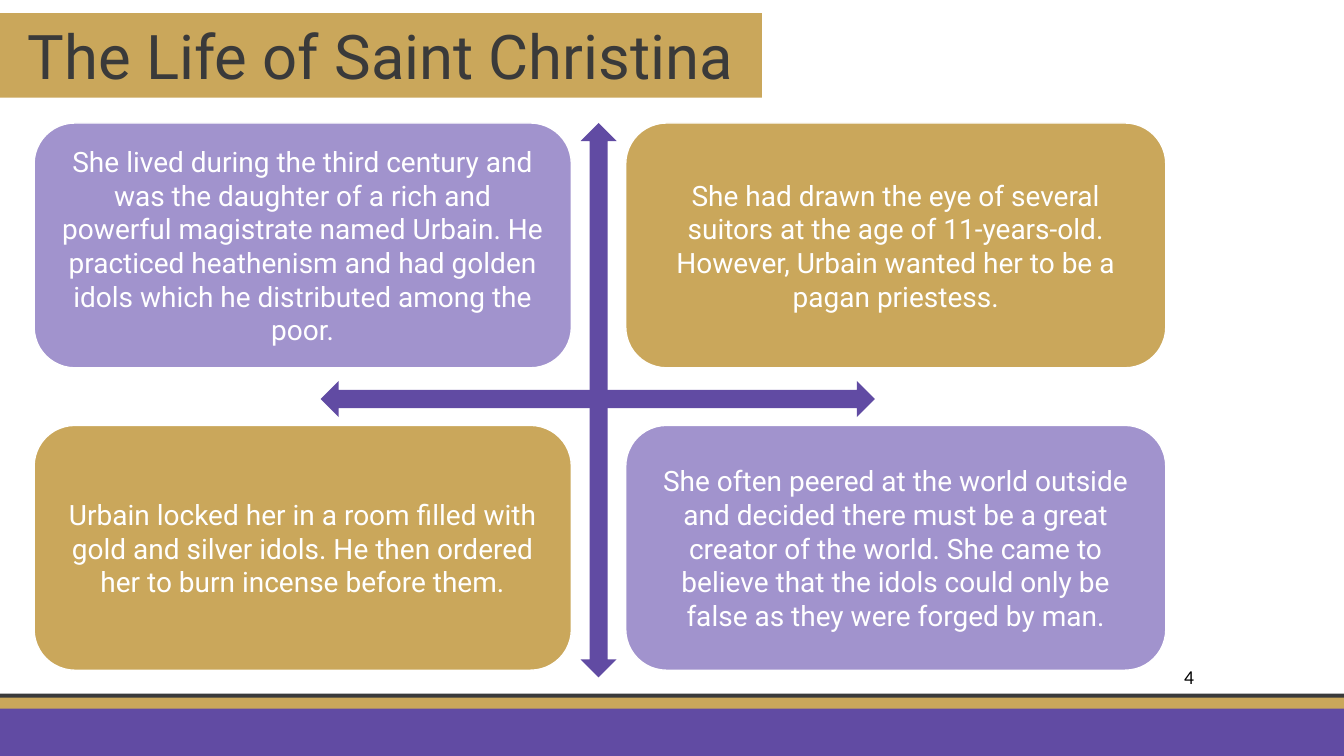
from dataclasses import dataclass

from pptx import Presentation
from pptx.dml.color import RGBColor
from pptx.enum.shapes import MSO_SHAPE as Preset
from pptx.enum.text import MSO_ANCHOR as Anchor, MSO_AUTO_SIZE as AutoSize, PP_ALIGN as Align
from pptx.util import Cm, Pt


@dataclass(frozen=True)
class Theme:
    gold: str = "CAA75B"
    purple: str = "614BA3"
    lilac: str = "A193CD"
    dark: str = "3A3A3A"
    white: str = "FFFFFF"
    black: str = "000000"
    font: str = "Roboto"
    number_font: str = "Calibri"
    title_size: int = 44
    body_size: int = 20
    number_size: int = 14


THEME = Theme()
SLIDE_WIDTH = 33.87
SLIDE_HEIGHT = 19.05

BANDS = [
    (17.48, 0.15, THEME.dark),
    (17.58, 0.3, THEME.gold),
    (17.86, 1.19, THEME.purple),
]
CARD_COLUMNS = [(0.86, 13.54), (15.77, 13.61)]
CARD_ROWS = [3.1, 10.72]
CARD_HEIGHT = 6.17
CARD_TEXTS = [
    [
        "She lived during the third century and was the daughter of a rich and "
        "powerful magistrate named Urbain. He practiced heathenism and had golden "
        "idols which he distributed among the poor.",
        "She had drawn the eye of several suitors at the age of 11-years-old. "
        "However, Urbain wanted her to be a pagan priestess.",
    ],
    [
        "Urbain locked her in a room filled with gold and silver idols. He then "
        "ordered her to burn incense before them.",
        "She often peered at the world outside and decided there must be a great "
        "creator of the world. She came to believe that the idols could only be "
        "false as they were forged by man.",
    ],
]


def add_block(slide, preset, left, top, width, height, fill):
    shape = slide.shapes.add_shape(preset, Cm(left), Cm(top), Cm(width), Cm(height))
    shape.shadow.inherit = False
    shape.fill.solid()
    shape.fill.fore_color.rgb = RGBColor.from_string(fill)
    shape.line.fill.background()
    return shape


def write_text(shape, text, size, color, font=THEME.font, align=Align.CENTER, anchor=Anchor.TOP):
    text_frame = shape.text_frame
    text_frame.text = text
    text_frame.word_wrap = True
    text_frame.vertical_anchor = anchor
    paragraph = text_frame.paragraphs[0]
    paragraph.alignment = align
    for run in paragraph.runs:
        run.font.name = font
        run.font.size = Pt(size)
        run.font.color.rgb = RGBColor.from_string(color)


def add_card(slide, left, top, width, fill, text):
    card = add_block(slide, Preset.ROUNDED_RECTANGLE, left, top, width, CARD_HEIGHT, fill)
    card.line.color.rgb = RGBColor.from_string(THEME.white)
    card.line.width = Pt(1)
    write_text(card, text, THEME.body_size, THEME.white, anchor=Anchor.MIDDLE)


def add_axis(slide, left, top, rotation):
    arrow = add_block(slide, Preset.LEFT_RIGHT_ARROW, left, top, 13.97, 0.91, THEME.purple)
    arrow.rotation = rotation


def add_title(slide, text):
    banner = add_block(slide, Preset.RECTANGLE, 0, 0.33, 19.2, 2.13, THEME.gold)
    write_text(banner, text, THEME.title_size, THEME.dark)
    banner.text_frame.auto_size = AutoSize.SHAPE_TO_FIT_TEXT


def add_page_number(slide, number):
    box = slide.shapes.add_textbox(Cm(29.59), Cm(16.64), Cm(2.11), Cm(0.86))
    write_text(box, number, THEME.number_size, THEME.black, THEME.number_font, Align.LEFT)
    box.text_frame.auto_size = AutoSize.SHAPE_TO_FIT_TEXT


def main():
    presentation = Presentation()
    presentation.slide_width = Cm(SLIDE_WIDTH)
    presentation.slide_height = Cm(SLIDE_HEIGHT)
    slide = presentation.slides.add_slide(presentation.slide_layouts[6])

    for top, height, fill in BANDS:
        add_block(slide, Preset.RECTANGLE, 0, top, SLIDE_WIDTH, height, fill)

    for row, top in enumerate(CARD_ROWS):
        for column, (left, width) in enumerate(CARD_COLUMNS):
            fill = THEME.lilac if row == column else THEME.gold
            add_card(slide, left, top, width, fill, CARD_TEXTS[row][column])

    add_axis(slide, 8.1, 9.63, 90)
    add_axis(slide, 8.08, 9.6, 0)
    add_title(slide, "The Life of Saint Christina")
    add_page_number(slide, "4")
    presentation.save("out.pptx")


if __name__ == "__main__":
    main()
